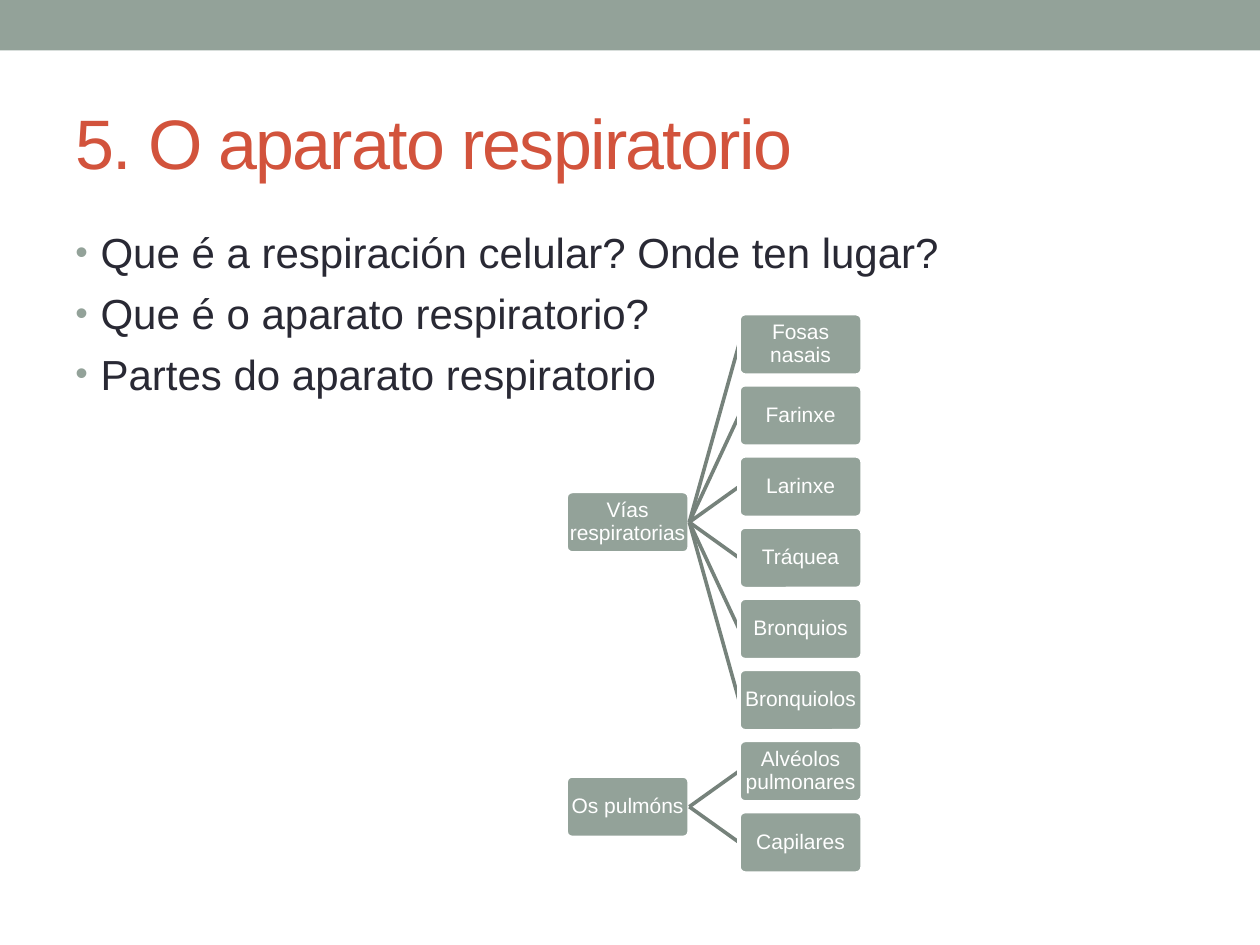
"""Build a slide on the respiratory system with a question list and a tree of its parts."""
import pptx
import pptx.util
import pptx.dml.color
import pptx.enum.shapes
import pptx.enum.text
import pptx.oxml
import pptx.oxml.ns
from dataclasses import dataclass

Pt = pptx.util.Pt
ALIGN = pptx.enum.text.PP_ALIGN
ANCHOR = pptx.enum.text.MSO_ANCHOR
SHAPE = pptx.enum.shapes.MSO_SHAPE

TITLE = "5. O aparato respiratorio"
QUESTIONS = [
    "Que é a respiración celular? Onde ten lugar?",
    "Que é o aparato respiratorio?",
    "Partes do aparato respiratorio",
]
TREE = {
    "Vías respiratorias": ["Fosas nasais", "Farinxe", "Larinxe", "Tráquea", "Bronquios", "Bronquiolos"],
    "Os pulmóns": ["Alvéolos pulmonares", "Capilares"],
}


@dataclass(frozen=True)
class Theme:
    font: str = "Arial"
    sage: str = "93A299"
    branch: str = "76827B"
    red: str = "D2533C"
    dark: str = "292934"
    white: str = "FFFFFF"
    title_size: int = 40
    body_size: int = 24
    node_size: int = 12
    line_width: float = 2.08


THEME = Theme()
SLIDE_SIZE = (720, 540)
BAND = (0, 0, 720, 28.8)
TITLE_BOX = (36, 41.8, 648, 77.8)
BODY_BOX = (36, 126, 648, 383.8)
NODE_WIDTH, NODE_HEIGHT = 70.4, 35.2
PARENT_LEFT, CHILD_LEFT = 323.5, 422.3
TREE_TOP, ROW_PITCH = 179.2, 40.65
BULLET_INDENT = 14.4
NODE_FRAME = dict(word_wrap=True, vertical_anchor=ANCHOR.MIDDLE,
                  **{f"margin_{side}": Pt(0.7) for side in ("left", "top", "right", "bottom")})


def rgb(value):
    return pptx.dml.color.RGBColor.from_string(value)


def apply(target, formats):
    for name, value in formats.items():
        setattr(target, name, value)


def write(paragraph, text, size, color, **formats):
    run = paragraph.add_run()
    run.text = text
    apply(run.font, dict(name=THEME.font, size=Pt(size)))
    run.font.color.rgb = rgb(color)
    apply(paragraph, formats)
    return run


def add_block(slide, kind, box):
    shape = slide.shapes.add_shape(kind, *map(Pt, box))
    shape.shadow.inherit = False
    shape.fill.solid()
    shape.fill.fore_color.rgb = rgb(THEME.sage)
    shape.line.fill.background()
    return shape


def add_node(slide, text, left, row):
    box = (left, TREE_TOP + row * ROW_PITCH, NODE_WIDTH, NODE_HEIGHT)
    shape = add_block(slide, SHAPE.ROUNDED_RECTANGLE, box)
    shape.adjustments[0] = 0.1
    shape.line.color.rgb = rgb(THEME.white)
    shape.line.width = Pt(THEME.line_width)
    apply(shape.text_frame, NODE_FRAME)
    write(shape.text_frame.paragraphs[0], text, THEME.node_size, THEME.white,
          alignment=ALIGN.CENTER, line_spacing=0.9)
    return shape


def add_branch(slide, parent):
    connector = slide.shapes.add_connector(pptx.enum.shapes.MSO_CONNECTOR.STRAIGHT, 0, 0, 0, 0)
    connector.line.color.rgb = rgb(THEME.branch)
    connector.line.width = Pt(THEME.line_width)
    properties = connector._element.spPr
    properties.append(pptx.oxml.parse_xml(f"<a:effectLst {pptx.oxml.ns.nsdecls('a')}/>"))
    connector.begin_connect(parent, 3)
    return connector


def add_tree(slide):
    first_row = 0
    for parent_text, children in TREE.items():
        middle_row = first_row + (len(children) - 1) / 2
        parent = add_node(slide, parent_text, PARENT_LEFT, middle_row)
        for row, child_text in enumerate(children, first_row):
            branch = add_branch(slide, parent)
            child = add_node(slide, child_text, CHILD_LEFT, row)
            branch.end_connect(child, 1)
        first_row += len(children)


def add_bullet(paragraph):
    properties = paragraph._p.get_or_add_pPr()
    properties.set("marL", str(Pt(BULLET_INDENT)))
    properties.set("indent", str(-Pt(BULLET_INDENT)))
    namespace = pptx.oxml.ns.nsdecls("a")
    for xml in (
        f'<a:buClr {namespace}><a:srgbClr val="{THEME.sage}"/></a:buClr>',
        f'<a:buSzPct {namespace} val="85000"/>',
        f'<a:buFont {namespace} typeface="{THEME.font}"/>',
        f'<a:buChar {namespace} char="•"/>',
    ):
        properties.append(pptx.oxml.parse_xml(xml))


def add_title(slide):
    title = slide.shapes.title
    apply(title, dict(zip(("left", "top", "width", "height"), map(Pt, TITLE_BOX))))
    apply(title.text_frame, dict(word_wrap=True, vertical_anchor=ANCHOR.MIDDLE))
    run = write(title.text_frame.paragraphs[0], TITLE, THEME.title_size, THEME.red,
                alignment=ALIGN.LEFT)
    run.font._element.set("spc", "-100")


def add_questions(slide):
    frame = slide.shapes.add_textbox(*map(Pt, BODY_BOX)).text_frame
    frame.word_wrap = True
    for index, question in enumerate(QUESTIONS):
        paragraph = frame.add_paragraph() if index else frame.paragraphs[0]
        write(paragraph, question, THEME.body_size, THEME.dark,
              alignment=ALIGN.LEFT, space_before=Pt(6))
        add_bullet(paragraph)


def main():
    presentation = pptx.Presentation()
    apply(presentation, dict(zip(("slide_width", "slide_height"), map(Pt, SLIDE_SIZE))))
    slide = presentation.slides.add_slide(presentation.slide_layouts[5])
    add_block(slide, SHAPE.RECTANGLE, BAND)
    add_title(slide)
    add_questions(slide)
    add_tree(slide)
    presentation.save("out.pptx")


if __name__ == "__main__":
    main()
